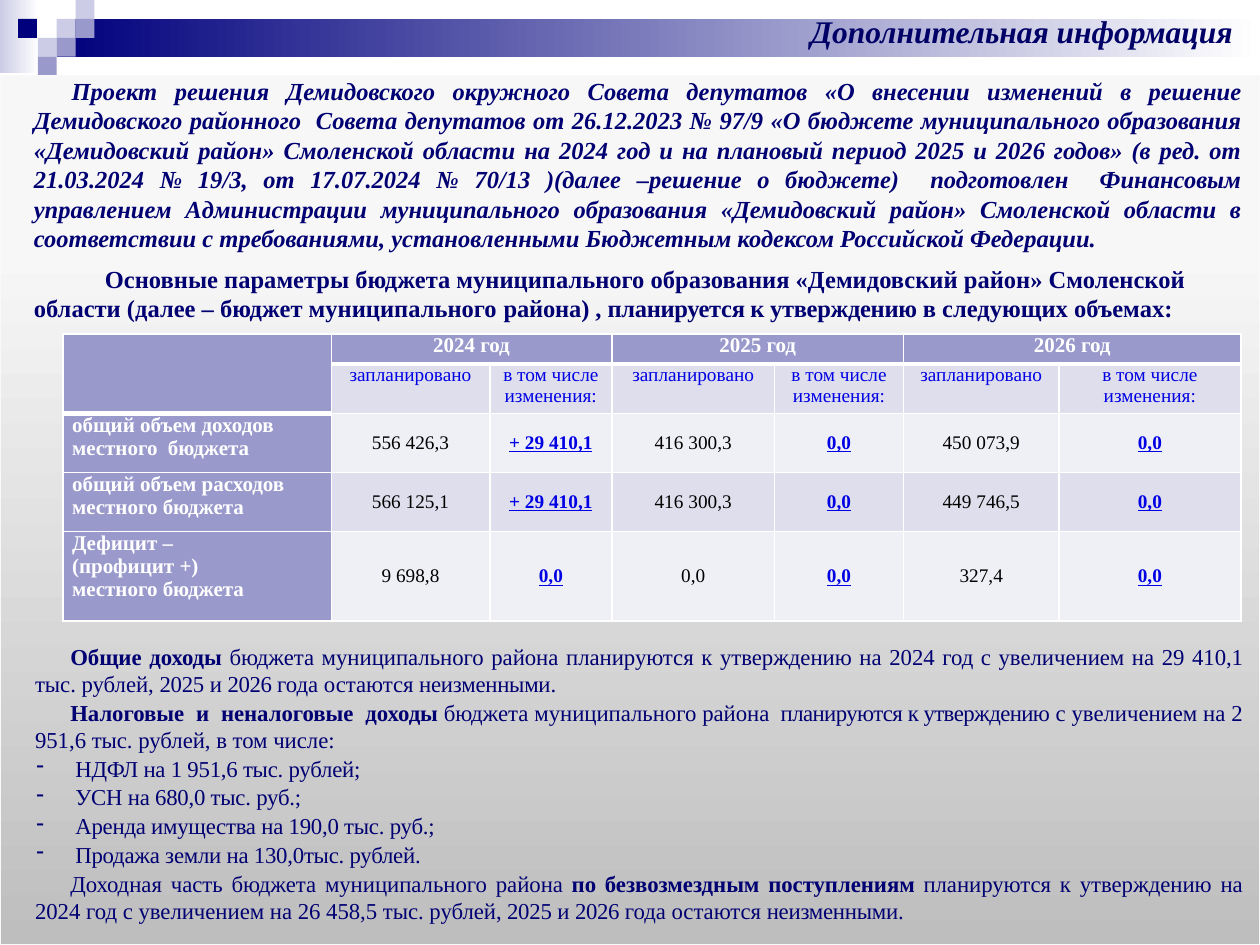
"""Build the budget information slide with its parameter table."""
from typing import NamedTuple

from lxml import etree
from pptx import Presentation
from pptx.dml import color
from pptx.enum import shapes, text
from pptx.oxml import ns
from pptx import util as u

FONT = "Times New Roman"
NAVY, BLUE, LILAC, PALE, WHITE = "000072", "0000E4", "9999CC", "CCCCE6", "FFFFFF"
LEFT, CENTER, JUSTIFY = text.PP_ALIGN.LEFT, text.PP_ALIGN.CENTER, text.PP_ALIGN.JUSTIFY


class Box(NamedTuple):
    left: float
    top: float
    width: float
    height: float


class Style(NamedTuple):
    size: float
    color: str
    bold: bool = False
    italic: bool = False
    underline: bool = False


class Piece(NamedTuple):
    text: str
    bold: bool = False
    tracking: float = 0


class Block(NamedTuple):
    pieces: list[Piece]
    size: float = 13
    line: float = 15.4
    before: float = 1.1
    margin: float = 0.72
    indent: float = 20.16
    align: text.PP_ALIGN = JUSTIFY
    italic: bool = False
    bullet: str = ""


UNCHANGED = [Piece("2025 ", tracking=-0.1), Piece("и "), Piece("2026 ", tracking=-0.2),
             Piece("года остаются "), Piece("неизменными", tracking=-0.1), Piece(".")]
INTRO = (
    "Проект решения Демидовского окружного Совета депутатов «О внесении изменений в решение "
    "Демидовского районного  Совета депутатов от 26.12.2023 № 97/9 «О бюджете муниципального "
    "образования «Демидовский район» Смоленской области на 2024 год и на плановый период 2025 "
    "и 2026 годов» (в ред. от 21.03.2024 № 19/3, от 17.07.2024 № 70/13 )(далее –решение о "
    "бюджете)  подготовлен  Финансовым управлением Администрации муниципального образования "
    "«Демидовский район» Смоленской области в соответствии с требованиями, установленными "
    "Бюджетным кодексом Российской Федерации.")
PARAMETERS = [
    Piece("Основные параметры бюджета муниципального образования «Демидовский район» "
          "Смоленской области (далее – бюджет муниципального ", True),
    Piece("района) ", True, -0.1), Piece(", ", True),
    Piece("планируется к утверждению ", True, -0.2), Piece("в следующих объемах:", True)]
INCOME_ITEMS = ["НДФЛ на 1 951,6 тыс. рублей;", "УСН на 680,0 тыс. руб.;",
                "Аренда имущества на 190,0 тыс. руб.;", "Продажа земли на 130,0тыс. рублей."]
BLOCKS = [
    Block([Piece(INTRO, True)], 14, 16.8, 0, 0, 21.6, italic=True),
    Block(PARAMETERS, 14, 16.8, 6.6, 0, 40.6, LEFT),
    Block([Piece("Общие доходы ", True),
           Piece("бюджета муниципального района планируются к утверждению на 2024 год "
                 "с увеличением на 29 410,1 тыс. рублей, "), *UNCHANGED], before=183),
    Block([Piece("Налоговые  и  неналоговые  доходы ", True),
           Piece("бюджета муниципального района "),
           Piece(" планируются к утверждению", tracking=-0.3),
           Piece(" с увеличением на 2 951,6 тыс. рублей, в том числе:")]),
    *(Block([Piece(item, tracking=-0.1)], margin=23.76, indent=-22.32, bullet="-")
      for item in INCOME_ITEMS),
    Block([Piece("Доходная часть бюджета муниципального района "),
           Piece("по безвозмездным поступлениям ", True),
           Piece("планируются к утверждению на 2024 год с увеличением на 26 458,5 тыс. рублей, "),
           *UNCHANGED]),
]
YEARS = ["2024 год", "2025 год", "2026 год"]
ROWS = [
    ("общий объем доходов  местного  бюджета",
     "556 426,3", "+ 29 410,1", "416 300,3", "0,0", "450 073,9", "0,0"),
    ("общий объем расходов местного бюджета",
     "566 125,1", "+ 29 410,1", "416 300,3", "0,0", "449 746,5", "0,0"),
    ("Дефицит –\n(профицит +)\nместного бюджета", "9 698,8", "0,0", "0,0", "0,0", "327,4", "0,0"),
]
COLUMN_WIDTHS = [153.3, 90.6, 69.8, 92.9, 73.8, 88.7, 104.1]
ROW_HEIGHTS = [17.3, 28.1, 33.8, 33.8, 51.2]
HEADER = Style(12, WHITE, bold=True)
SUBHEADER = Style(11, BLUE)
PLANNED = Style(11, "000000")
CHANGE = Style(11, BLUE, bold=True, underline=True)
SQUARE = 10.8
SQUARES = [(32.4, 10.8, PALE), (43.2, 0, PALE), (43.2, 10.8, LILAC), (21.6, 21.6, PALE),
           (10.3, 10.8, "00007D"), (32.4, 21.6, LILAC), (21.6, 32.4, LILAC)]


def rgb(value: str) -> color.RGBColor:
    """Turn a hex string into a colour."""
    return color.RGBColor.from_string(value)


def points(box: Box) -> list[u.Length]:
    """Convert a box to lengths."""
    return [u.Pt(value) for value in box]


def add_block(slide, box: Box, fill: str, end: str = "", angle: float = 0, stop: float = 1,
              kind=shapes.MSO_SHAPE.RECTANGLE):
    """Add a borderless shape with a solid or two-colour gradient fill."""
    shape = slide.shapes.add_shape(kind, *points(box))
    shape.shadow.inherit = False
    shape.line.fill.background()
    if end:
        shape.fill.gradient()
        shape.fill.gradient_angle = angle
        for gradient_stop, value, position in zip(shape.fill.gradient_stops, (fill, end), (0, stop)):
            gradient_stop.color.rgb = rgb(value)
            gradient_stop.position = position
    else:
        shape.fill.solid()
        shape.fill.fore_color.rgb = rgb(fill)
    return shape


def format_run(run, style: Style) -> None:
    """Apply a text style to a run."""
    font = run.font
    font.name, font.size = FONT, u.Pt(style.size)
    font.bold, font.italic, font.underline = style.bold, style.italic, style.underline
    font.color.rgb = rgb(style.color)


def write_block(paragraph, block: Block) -> None:
    """Fill a paragraph with the pieces of a text block."""
    paragraph.alignment = block.align
    paragraph.line_spacing = u.Pt(block.line)
    paragraph.space_before = u.Pt(block.before)
    properties = paragraph._p.get_or_add_pPr()
    properties.set("marL", str(u.Pt(block.margin)))
    properties.set("indent", str(u.Pt(block.indent)))
    if block.bullet:
        etree.SubElement(properties, ns.qn("a:buChar")).set("char", block.bullet)
    for piece in block.pieces:
        run = paragraph.add_run()
        run.text = piece.text
        format_run(run, Style(block.size, NAVY, piece.bold, block.italic))
        if piece.tracking:
            run._r.get_or_add_rPr().set("spc", str(round(piece.tracking * 100)))


def set_borders(cell, top: float, bottom: float) -> None:
    """Draw white borders around a cell."""
    properties = cell._tc.get_or_add_tcPr()
    for index, (side, width) in enumerate(zip("LRTB", (1, 1, top, bottom))):
        line = etree.Element(ns.qn(f"a:ln{side}"), w=str(u.Pt(width)))
        fill = etree.SubElement(line, ns.qn("a:solidFill"))
        etree.SubElement(fill, ns.qn("a:srgbClr")).set("val", WHITE)
        properties.insert(index, line)


def write_cell(cell, content: str, style: Style, align, middle: bool) -> None:
    """Write and format the text of a cell."""
    cell.text_frame.text = content
    cell.vertical_anchor = text.MSO_ANCHOR.MIDDLE if middle else text.MSO_ANCHOR.TOP
    for paragraph in cell.text_frame.paragraphs:
        paragraph.alignment = align
        for run in paragraph.runs:
            format_run(run, style)


def add_budget_table(slide) -> None:
    """Add the table of budget parameters by year."""
    box = Box(36, 190.8, sum(COLUMN_WIDTHS), sum(ROW_HEIGHTS))
    table = slide.shapes.add_table(len(ROW_HEIGHTS), len(COLUMN_WIDTHS), *points(box)).table
    for column, width in zip(table.columns, COLUMN_WIDTHS):
        column.width = u.Pt(width)
    for row, height in zip(table.rows, ROW_HEIGHTS):
        row.height = u.Pt(height)
    year_cells = [cell for year in YEARS for cell in (year, "")]
    labels = ["запланировано", "в том числе изменения:"] * len(YEARS)
    for row, values in enumerate([("", *year_cells), ("", *labels), *ROWS]):
        for column, value in enumerate(values):
            cell = table.cell(row, column)
            heading = row == 0 or column == 0
            cell.margin_left = cell.margin_right = u.Pt(5.2)
            cell.margin_top = cell.margin_bottom = 0
            cell.fill.solid()
            cell.fill.fore_color.rgb = rgb(LILAC if heading else "DEDEEC" if row % 2 else "EFEFF6")
            below_header = row == (1 if column else 2)
            set_borders(cell, 3 if below_header else 1, 3 if row == 0 else 1)
            style = HEADER if heading else SUBHEADER if row == 1 else PLANNED if column % 2 else CHANGE
            write_cell(cell, value, style, CENTER if column else LEFT, row > 1 and column > 0)
    table.cell(0, 0).merge(table.cell(1, 0))
    for column in range(1, len(COLUMN_WIDTHS), 2):
        table.cell(0, column).merge(table.cell(0, column + 1))


def main() -> None:
    """Build and save the slide."""
    presentation = Presentation()
    presentation.slide_width, presentation.slide_height = u.Pt(720), u.Pt(540)
    slide = presentation.slides.add_slide(presentation.slide_layouts[6])
    add_block(slide, Box(0, 0, 22.3, 41.8), PALE, WHITE)
    add_block(slide, Box(32.4, 10.8, 687.6, 21.6), "00007D", WHITE)
    for left, top, fill in SQUARES:
        add_block(slide, Box(left, top, SQUARE, SQUARE), fill)
    panel = add_block(slide, Box(0, 43.2, 720, 496.8), "BEBEBE", "F7F7F7", 90, 0.8,
                      shapes.MSO_SHAPE.FLOWCHART_PROCESS)
    panel.line.color.rgb, panel.line.width = rgb("F9F9F9"), u.Pt(0.75)

    title = slide.shapes.add_textbox(*points(Box(450.7, 3.6, 266.4, 28.8))).text_frame
    title.word_wrap = True
    title.text = "Дополнительная информация"
    title.paragraphs[0].alignment = CENTER
    format_run(title.paragraphs[0].runs[0], Style(18, "000066", True, True))

    body = slide.shapes.add_textbox(*points(Box(12.24, 29.5, 704.9, 513.4))).text_frame
    body.word_wrap = True
    body.margin_top = u.Pt(13.9)
    for index, block in enumerate(BLOCKS):
        write_block(body.add_paragraph() if index else body.paragraphs[0], block)
    add_budget_table(slide)
    presentation.save("out.pptx")


if __name__ == "__main__":
    main()
